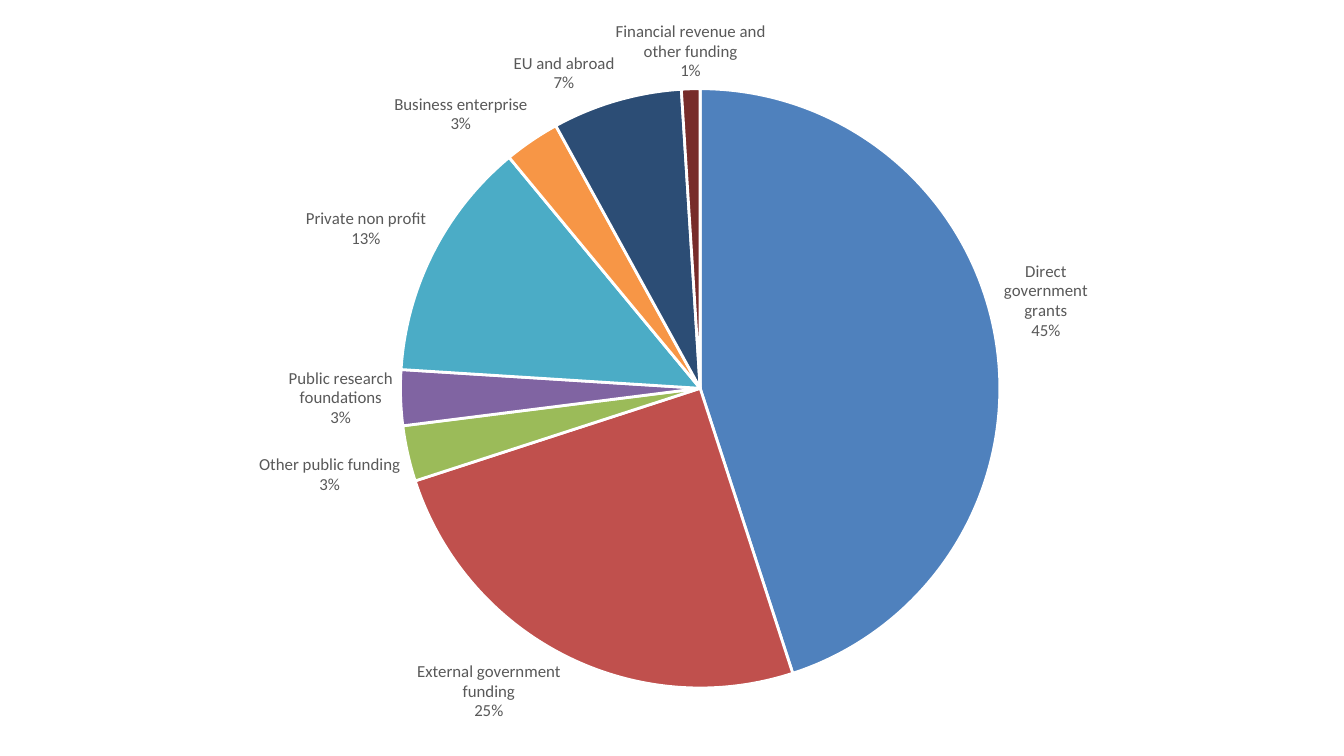
from lxml.etree import SubElement
from pptx import Presentation
from pptx.chart.data import CategoryChartData
from pptx.dml.color import RGBColor
from pptx.enum.chart import XL_CHART_TYPE, XL_LABEL_POSITION
from pptx.oxml.ns import qn
from pptx.util import Inches, Pt

FUNDING = [
    ("Direct government grants", 45, "4F81BD"),
    ("External government funding", 25, "C0504D"),
    ("Other public funding", 3, "9BBB59"),
    ("Public research foundations", 3, "8064A2"),
    ("Private non profit", 13, "4BACC6"),
    ("Business enterprise", 3, "F79646"),
    ("EU and abroad", 7, "2C4D75"),
    ("Financial revenue and other funding", 1, "772C2A"),
]
SLIDE_WIDTH = Inches(10)
SLIDE_HEIGHT = SLIDE_WIDTH * 9 // 16
CHART_BOX = (1.44, 0.02, 7.1, 5.59)
PIE_CENTER = (3.77, 2.87)
PIE_DIAMETER = 4.46
LABEL_FORMAT = {
    "show_category_name": True,
    "show_percentage": True,
    "show_value": False,
    "number_format": "0%",
    "number_format_is_linked": False,
    "position": XL_LABEL_POSITION.OUTSIDE_END,
}


def apply_format(target, values):
    for name, value in values.items():
        setattr(target, name, value)


def set_font(font, size, color):
    apply_format(font, {"name": "Calibri", "size": Pt(size), "bold": False})
    font.color.rgb = RGBColor.from_string(color)


def pie_area(center, diameter, chart_size):
    """Return the square around the pie as shares of the chart's size."""
    area = {}
    for edge, extent, middle, length in zip("xy", "wh", center, chart_size):
        area[edge] = (middle - diameter / 2) / length
        area[extent] = diameter / length
    return area


def set_plot_area(chart, area):
    plot_area = chart.plots[0].series[0]._element.getparent().getparent()
    for layout in plot_area.findall(qn("c:layout")):
        plot_area.remove(layout)
    layout = SubElement(plot_area, qn("c:layout"))
    plot_area.insert(0, layout)
    manual = SubElement(layout, qn("c:manualLayout"))
    settings = {"layoutTarget": "inner", "xMode": "edge", "yMode": "edge"}
    settings.update((name, area[name]) for name in "xywh")
    for name, value in settings.items():
        SubElement(manual, qn(f"c:{name}")).set("val", str(value))


def color_slices(series, colors):
    for index, color in enumerate(colors):
        slice_format = series.points[index].format
        slice_format.fill.solid()
        slice_format.fill.fore_color.rgb = RGBColor.from_string(color)
        slice_format.line.color.rgb = RGBColor.from_string("FFFFFF")
        slice_format.line.width = Pt(1.5)


def label_slices(series):
    labels = series.data_labels
    apply_format(labels, LABEL_FORMAT)
    set_font(labels.font, 9, "595959")
    element = labels._element
    separator = SubElement(element, qn("c:separator"))
    separator.text = "\n"
    element.find(qn("c:showBubbleSize")).addnext(separator)


def add_pie(slide, box, rows):
    names, values, colors = zip(*rows)
    data = CategoryChartData()
    data.categories = names
    data.add_series("Series 1", values)
    chart = slide.shapes.add_chart(
        XL_CHART_TYPE.PIE, *(Inches(length) for length in box), data
    ).chart
    apply_format(chart, {"has_title": False, "has_legend": False})
    set_font(chart.font, 10, "000000")
    chart.plots[0].vary_by_categories = True
    series = chart.plots[0].series[0]
    color_slices(series, colors)
    label_slices(series)
    set_plot_area(chart, pie_area(PIE_CENTER, PIE_DIAMETER, box[2:]))


def main():
    presentation = Presentation()
    apply_format(
        presentation, {"slide_width": SLIDE_WIDTH, "slide_height": SLIDE_HEIGHT}
    )
    slide = presentation.slides.add_slide(presentation.slide_layouts[6])
    add_pie(slide, CHART_BOX, FUNDING)
    presentation.save("out.pptx")


if __name__ == "__main__":
    main()
